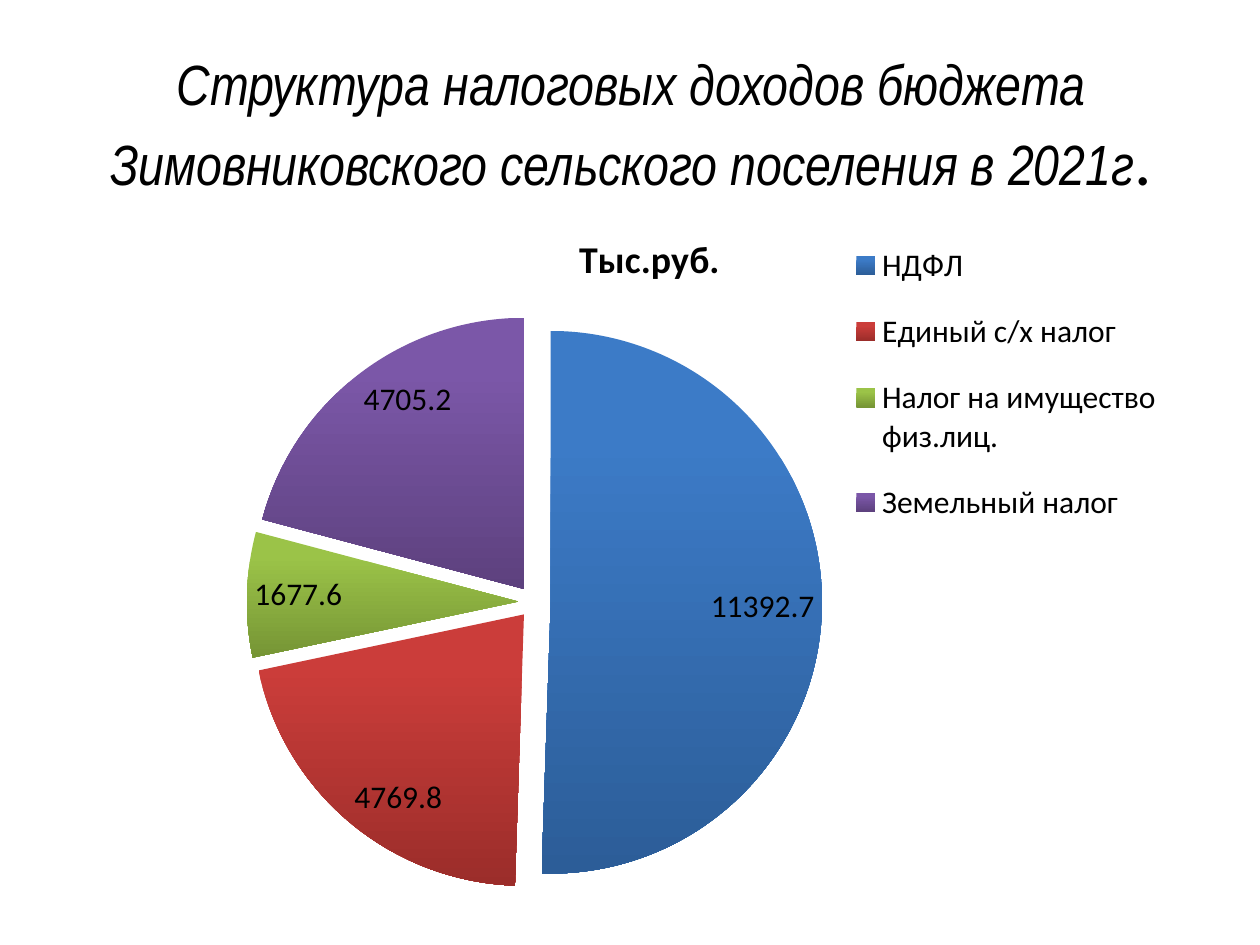
from lxml import etree
from pptx import Presentation
from pptx import util as u
from pptx.chart import data as chart_data
from pptx.dml.color import RGBColor
from pptx.enum import chart as chart_enum, text
from pptx.oxml import ns

THEME = {
    "ink": RGBColor(0, 0, 0),
    "title": {"name": "Arial Narrow", "size": u.Pt(32.4), "italic": True},
    "period": {"name": "Calibri", "size": u.Pt(39.6), "italic": False},
    "chart": {"name": "Calibri", "size": u.Pt(18)},
    "heading": {"name": "Calibri", "size": u.Pt(21.6), "bold": True},
}

# category, value, slice colour at the top and at the bottom
TAXES = [
    ("НДФЛ", 11392.7, "3C7BC7", "2C5D98"),
    ("Единый с/х налог", 4769.8, "CB3D3A", "9B2D2A"),
    ("Налог на имущество физ.лиц.", 1677.6, "9BC348", "769535"),
    ("Земельный налог", 4705.2, "7B57A8", "5D417E"),
]
UNIT = "Тыс.руб."


def set_font(font, style):
    for name, value in style.items():
        setattr(font, name, value)
    font.color.rgb = THEME["ink"]


def place_manually(parent, before, layout):
    """Give a chart part a fixed place, in fractions of the chart area."""
    for old in parent.findall(ns.qn("c:layout")):
        parent.remove(old)
    outer = etree.Element(ns.qn("c:layout"))
    manual = etree.SubElement(outer, ns.qn("c:manualLayout"))
    for tag, value in layout.items():
        etree.SubElement(manual, ns.qn(f"c:{tag}")).set("val", str(value))
    parent.find(ns.qn(before)).addprevious(outer)


deck = Presentation()
deck.slide_width, deck.slide_height = u.Inches(10), u.Inches(7.5)
page = deck.slides.add_slide(deck.slide_layouts[5])

# Title
title = page.shapes.title
title.left, title.top = u.Inches(0.51), u.Inches(0.36)
title.width, title.height = u.Inches(9), u.Inches(1.25)
title.text_frame.vertical_anchor = text.MSO_ANCHOR.MIDDLE
para = title.text_frame.paragraphs[0]
para.alignment = text.PP_ALIGN.CENTER
for words, style in [
    ("Структура налоговых доходов бюджета Зимовниковского сельского поселения в 2021г", "title"),
    (".", "period"),
]:
    span = para.add_run()
    span.text = words
    set_font(span.font, THEME[style])

# Pie chart
table = chart_data.CategoryChartData(number_format="0.0")
table.categories = [tax[0] for tax in TAXES]
table.add_series(UNIT, [tax[1] for tax in TAXES])
chart = page.shapes.add_chart(
    chart_enum.XL_CHART_TYPE.PIE,
    u.Inches(0.59), u.Inches(1.62), u.Inches(9.13), u.Inches(5.59), table,
).chart
set_font(chart.font, THEME["chart"])

# Chart heading
chart.has_title = True
heading = chart.chart_title.text_frame
heading.text = UNIT
set_font(heading.paragraphs[0].runs[0].font, THEME["heading"])

# Slices
plot = chart.plots[0]
plot.vary_by_categories = True
series = plot.series[0]
for index, (_, _, top, bottom) in enumerate(TAXES):
    fill = series.points[index].format.fill
    fill.gradient()
    fill.gradient_angle = 270
    for stop, position, colour in zip(fill.gradient_stops, (0.2, 1), (top, bottom)):
        stop.position = position
        stop.color.rgb = RGBColor.from_string(colour)
explosion = etree.Element(ns.qn("c:explosion"))
explosion.set("val", "6")
series._element.find(ns.qn("c:dPt")).addprevious(explosion)

# Value labels
plot.has_data_labels = True
labels = plot.data_labels
labels.show_value = True
labels.show_percentage = False
labels.number_format, labels.number_format_is_linked = "0.0", False
labels.position = chart_enum.XL_LABEL_POSITION.INSIDE_END
set_font(labels.font, THEME["chart"])

# Legend
chart.has_legend = True
legend = chart.legend
legend.position = chart_enum.XL_LEGEND_POSITION.RIGHT
legend.include_in_layout = False
set_font(legend.font, THEME["chart"])

# Places of the pie and the legend
place_manually(legend._element, "c:overlay", {
    "xMode": "edge", "yMode": "edge", "x": 0.66, "y": 0.02, "w": 0.3, "h": 0.47})
place_manually(plot._element.getparent(), "c:pieChart", {
    "layoutTarget": "inner", "xMode": "edge", "yMode": "edge",
    "x": 0.15, "y": 0.15, "w": 0.5, "h": 0.83})

deck.save("out.pptx")
